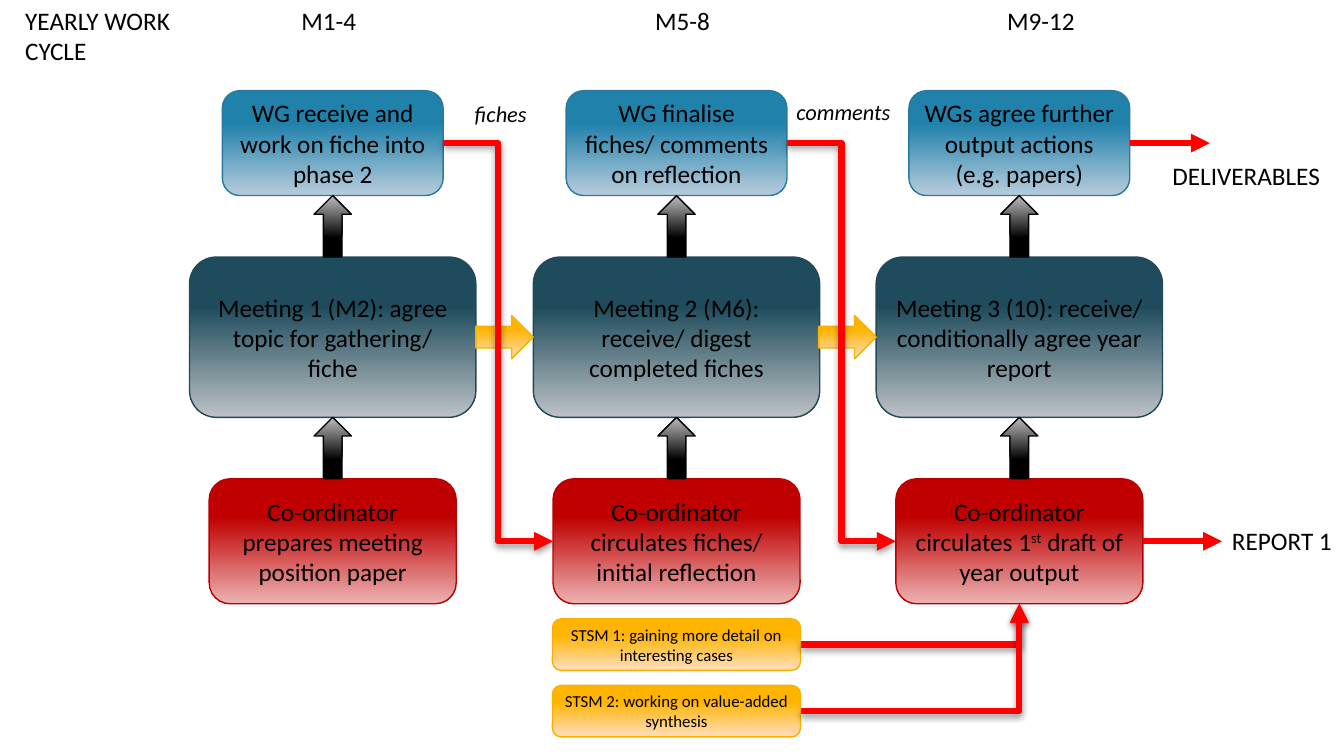
"""Build the yearly work cycle slide."""
from dataclasses import dataclass

from lxml import etree
from pptx import Presentation
from pptx.dml.color import RGBColor
from pptx.enum import shapes, text
from pptx.oxml import ns
from pptx.util import Inches, Pt

COLORS = {"black": "000000", "red": "FF0000"}
GRADIENTS = {
    "teal": ("1F4C5D", "BCC2C5", "224957"),
    "blue": ("2081AB", "B8CCDC", "287A9E"),
    "crimson": ("C00000", "ECB3B3", "BC0000"),
    "amber": ("FFB400", "FFDEBD", "F9B000"),
    "black": ("000000", "BDBDBD", "000000"),
}
CENTRES = (3.3, 6.71, 10.11)
TOP, LEFT, BOTTOM, RIGHT = range(4)
ARROW_WIDTH, ARROW_HEIGHT = 0.37, 0.61


@dataclass(frozen=True)
class Row:
    """A row of one box per column; text between bars is superscript."""
    top: float
    width: float
    height: float
    gradient: str
    wordings: tuple[str, str, str]


@dataclass(frozen=True)
class Label:
    """A free text label."""
    wording: str
    left: float
    top: float
    width: float
    size: int = 18
    italic: bool = False


MEETINGS = Row(2.55, 2.84, 1.59, "teal", (
    "Meeting 1 (M2): agree topic for gathering/ fiche",
    "Meeting 2 (M6): receive/ digest completed fiches",
    "Meeting 3 (10): receive/ conditionally agree year report"))
GROUPS = Row(0.9, 2.19, 1.04, "blue", (
    "WG receive and work on fiche into phase 2",
    "WG finalise fiches/ comments on reflection",
    "WGs agree further output actions (e.g. papers)"))
COORDINATORS = Row(4.75, 2.45, 1.24, "crimson", (
    "Co-ordinator prepares meeting position paper",
    "Co-ordinator circulates fiches/ initial reflection",
    "Co-ordinator circulates 1|st| draft of year output"))
MISSIONS = (
    "STSM 1: gaining more detail on interesting cases",
    "STSM 2: working on value-added synthesis")
LABELS = (
    Label("M1-4", 2.89, 0, 1),
    Label("M5-8", 6.4, 0, 1),
    Label("M9-12", 9.89, 0, 1),
    Label("fiches", 4.61, 0.94, 1, 16, True),
    Label("comments", 7.8, 0.92, 1.23, 16, True),
    Label("REPORT 1", 12.12, 5.16, 1.21),
    Label("DELIVERABLES", 11.53, 1.54, 1.74),
)


def write(shape, wording: str, size: int, alignment, italic: bool = False) -> None:
    """Put formatted text in a shape."""
    shape.text_frame.word_wrap = True
    paragraph = shape.text_frame.paragraphs[0]
    paragraph.alignment = alignment
    font = paragraph.font
    font.name, font.size, font.italic = "Calibri", Pt(size), italic
    font.color.rgb = RGBColor.from_string(COLORS["black"])
    for index, part in enumerate(wording.split("|")):
        run = paragraph.add_run()
        run.text = part
        if index % 2:
            run.font._element.set("baseline", "30000")


def add_gradient_shape(slide, kind, left: float, top: float, width: float,
                       height: float, gradient: str, angle: int = 270):
    """Add a preset shape with a two-stop gradient."""
    shape = slide.shapes.add_shape(
        kind, Inches(left), Inches(top), Inches(width), Inches(height))
    shape.shadow.inherit = False
    start, end, outline = GRADIENTS[gradient]
    shape.fill.gradient()
    shape.fill.gradient_angle = angle
    for stop, position, color in zip(shape.fill.gradient_stops, (0.31, 1), (start, end)):
        stop.position = position
        stop.color.rgb = RGBColor.from_string(color)
    shape.line.color.rgb = RGBColor.from_string(outline)
    shape.line.width = Pt(1)
    return shape


def add_box(slide, left: float, top: float, width: float, height: float,
            gradient: str, wording: str, size: int = 18):
    """Add a rounded box with centred text."""
    box = add_gradient_shape(slide, shapes.MSO_SHAPE.ROUNDED_RECTANGLE,
                             left, top, width, height, gradient)
    box.text_frame.vertical_anchor = text.MSO_ANCHOR.MIDDLE
    write(box, wording, size, text.PP_ALIGN.CENTER)
    return box


def add_row(slide, row: Row) -> list:
    """Add the boxes of a row, centred on the columns."""
    return [add_box(slide, centre - row.width / 2, row.top, row.width,
                    row.height, row.gradient, wording)
            for centre, wording in zip(CENTRES, row.wordings)]


def add_red_arrow(slide, kind, source, end_x: int = 0, target=None, site: int = LEFT):
    """Add a red arrow from the right of a box to a target or a point."""
    y = source.top + source.height // 2
    arrow = slide.shapes.add_connector(kind, source.left + source.width, y, end_x, y)
    arrow.begin_connect(source, RIGHT)
    if target is not None:
        arrow.end_connect(target, site)
    arrow.line.color.rgb = RGBColor.from_string(COLORS["red"])
    arrow.line.width = Pt(4.5)
    properties = arrow._element.spPr
    line = properties.find(ns.qn("a:ln"))
    etree.SubElement(line, ns.qn("a:tailEnd"), type="triangle")
    effects = etree.SubElement(properties, ns.qn("a:effectLst"))
    if kind == shapes.MSO_CONNECTOR.ELBOW:
        shadow = etree.SubElement(
            effects, ns.qn("a:outerShdw"), blurRad=str(Pt(5)), dist=str(Pt(2)),
            dir="5400000", rotWithShape="0")
        color = etree.SubElement(shadow, ns.qn("a:srgbClr"), val=COLORS["black"])
        etree.SubElement(color, ns.qn("a:alpha"), val="40000")
    if site == BOTTOM:
        properties.find(ns.qn("a:prstGeom")).set("prst", "bentConnector2")


def main() -> None:
    """Draw the slide and save it."""
    presentation = Presentation()
    presentation.slide_width, presentation.slide_height = Inches(13.33), Inches(7.5)
    slide = presentation.slides.add_slide(presentation.slide_layouts[5])

    title = slide.shapes.title
    title.left, title.top = Inches(0.15), Inches(0)
    title.width, title.height = Inches(1.73), Inches(0.71)
    title.text_frame.auto_size = text.MSO_AUTO_SIZE.NONE
    title.text_frame.vertical_anchor = text.MSO_ANCHOR.TOP
    write(title, "YEARLY WORK CYCLE", 18, text.PP_ALIGN.LEFT)

    add_row(slide, MEETINGS)
    for left in (4.72, 8.12):
        add_gradient_shape(slide, shapes.MSO_SHAPE.RIGHT_ARROW,
                           left, 3.13, 0.57, 0.43, "amber")
    groups = add_row(slide, GROUPS)
    coordinators = add_row(slide, COORDINATORS)
    for row in (GROUPS, MEETINGS):
        for centre in CENTRES:
            add_gradient_shape(slide, shapes.MSO_SHAPE.UP_ARROW,
                               centre - ARROW_WIDTH / 2, row.top + row.height,
                               ARROW_WIDTH, ARROW_HEIGHT, "black", angle=90)
    missions = [add_box(slide, 5.48, 6.14 + 0.66 * index, 2.46, 0.51, "amber", wording, 12)
                for index, wording in enumerate(MISSIONS)]

    elbow, straight = shapes.MSO_CONNECTOR.ELBOW, shapes.MSO_CONNECTOR.STRAIGHT
    for group, coordinator in zip(groups, coordinators[1:]):
        add_red_arrow(slide, elbow, group, target=coordinator)
    for mission in missions:
        add_red_arrow(slide, elbow, mission, target=coordinators[-1], site=BOTTOM)
    add_red_arrow(slide, straight, groups[-1], Inches(12))
    add_red_arrow(slide, straight, coordinators[-1], Inches(12.12))

    for label in LABELS:
        box = slide.shapes.add_textbox(Inches(label.left), Inches(label.top),
                                       Inches(label.width), Inches(0.4))
        write(box, label.wording, label.size, text.PP_ALIGN.LEFT, label.italic)
    presentation.save("out.pptx")


if __name__ == "__main__":
    main()
